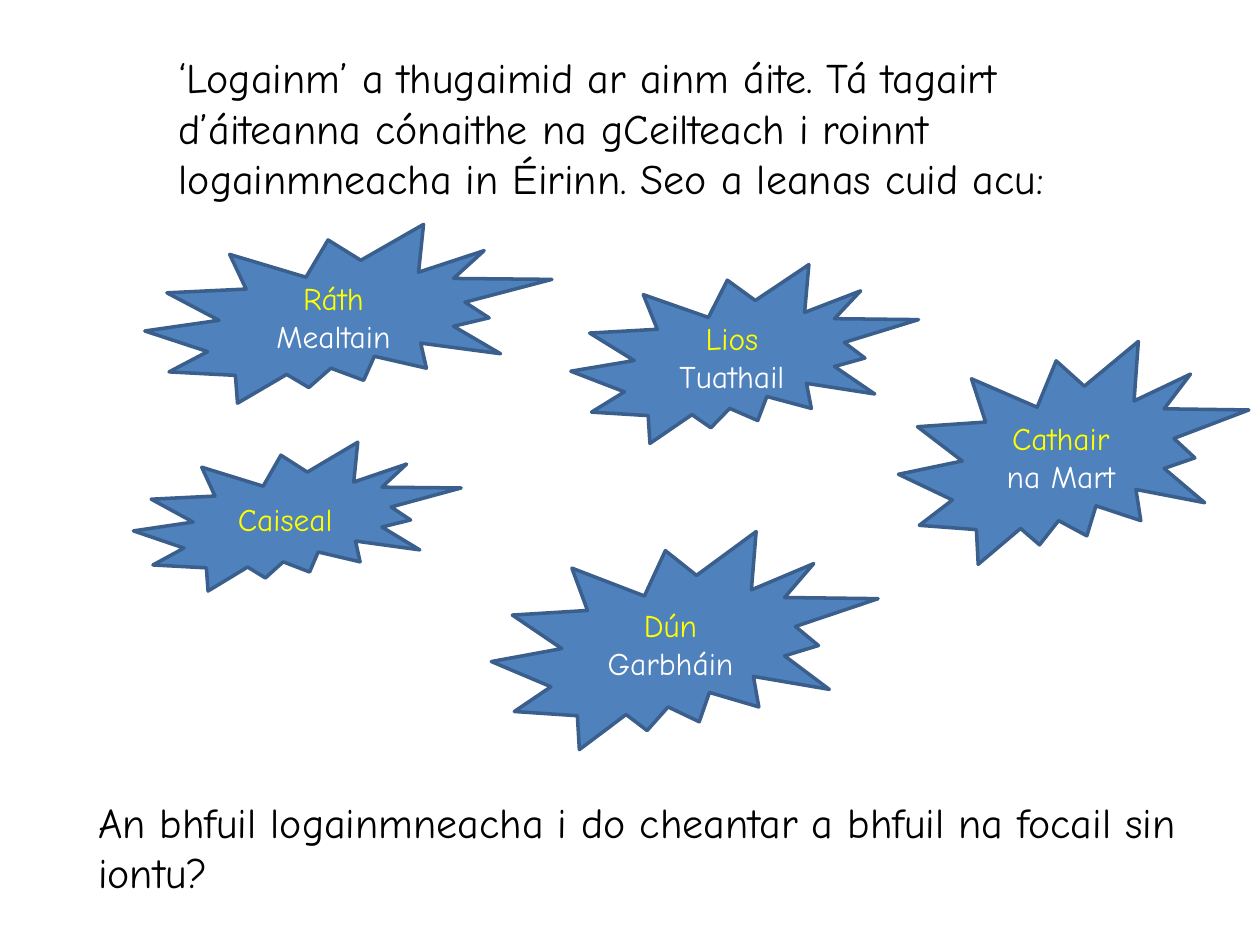
from pptx import Presentation
from pptx.dml.color import RGBColor
from pptx.enum.shapes import MSO_SHAPE
from pptx.enum.text import MSO_ANCHOR, MSO_AUTO_SIZE, PP_ALIGN
from pptx.util import Pt

BURST = MSO_SHAPE.EXPLOSION2
MIDDLE = MSO_ANCHOR.MIDDLE
CENTER = PP_ALIGN.CENTER
FIT_SHAPE = MSO_AUTO_SIZE.SHAPE_TO_FIT_TEXT

THEME = {
    "font": "Comic Neue",
    "body_size": Pt(24),
    "burst_size": Pt(18),
    "text": RGBColor.from_string("000000"),
    "element": RGBColor.from_string("FFFF00"),
    "rest": RGBColor.from_string("FFFFFF"),
    "burst": RGBColor.from_string("4F81BD"),
    "outline": RGBColor.from_string("3A5F8C"),
}


def add_run(paragraph, text, size, color):
    run = paragraph.add_run()
    run.text = text
    for attribute, value in {"name": THEME["font"], "size": size}.items():
        setattr(run.font, attribute, value)
    run.font.color.rgb = color


prs = Presentation()
prs.slide_width, prs.slide_height = Pt(720), Pt(540)
slide = prs.slides.add_slide(prs.slide_layouts[6])

# Introduction and closing question: left, top, width, height, wording
passages = [
    (95, 26, 553.5, 93.6,
     "‘Logainm’ a thugaimid ar ainm áite. Tá tagairt d’áiteanna cónaithe "
     "na gCeilteach i roinnt logainmneacha in Éirinn. Seo a leanas cuid acu:"),
    (49, 451.4, 651, 65.5,
     "An bhfuil logainmneacha i do cheantar a bhfuil na focail sin iontu?"),
]
for *bounds, wording in passages:
    passage = slide.shapes.add_textbox(*map(Pt, bounds)).text_frame
    for attribute, value in {"word_wrap": True, "auto_size": FIT_SHAPE}.items():
        setattr(passage, attribute, value)
    add_run(passage.paragraphs[0], wording, THEME["body_size"], THEME["text"])

# Placenames: left, top, width, height, highlighted element, rest of the name
placenames = [
    (82.8, 128.2, 232.6, 102.2, "Ráth", " Mealtain"),
    (326.2, 151.2, 198.7, 102.2, "Lios", " Tuathail"),
    (76.3, 252.7, 187.2, 85, "Caiseal", ""),
    (513.4, 195.1, 200.2, 127.4, "Cathair", " na Mart"),
    (280.8, 303.8, 221, 124.6, "Dún", " Garbháin"),
]
for *bounds, element, rest in placenames:
    burst = slide.shapes.add_shape(BURST, *map(Pt, bounds))
    burst.shadow.inherit = False
    burst.fill.solid()
    burst.fill.fore_color.rgb = THEME["burst"]
    burst.line.color.rgb = THEME["outline"]
    burst.line.width = Pt(2)

    burst.text_frame.word_wrap = True
    burst.text_frame.vertical_anchor = MIDDLE
    placename = burst.text_frame.paragraphs[0]
    placename.alignment = CENTER
    add_run(placename, element, THEME["burst_size"], THEME["element"])
    if rest:
        add_run(placename, rest, THEME["burst_size"], THEME["rest"])

prs.save("out.pptx")
